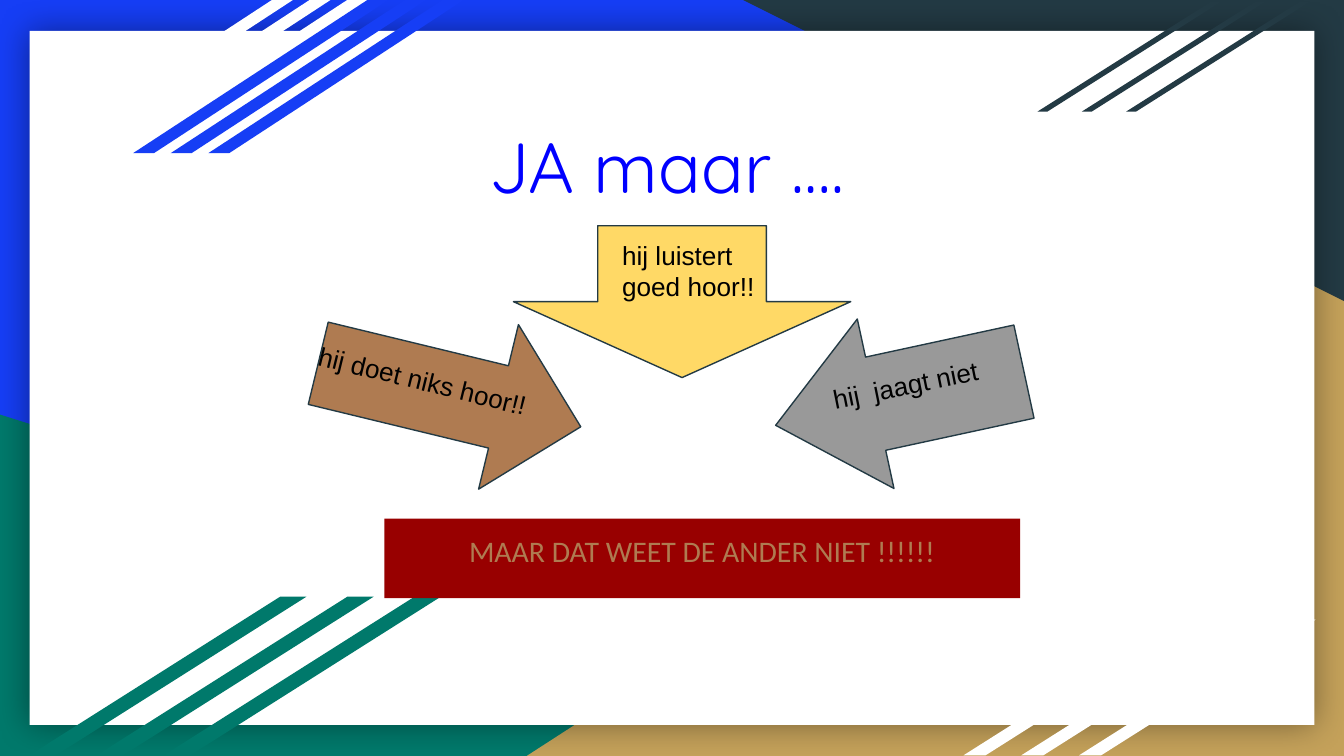
from lxml.etree import SubElement
from pptx import Presentation
from pptx.dml.color import RGBColor
from pptx.enum.shapes import MSO_SHAPE
from pptx.enum.text import MSO_ANCHOR, MSO_AUTO_SIZE, PP_ALIGN
from pptx.oxml.ns import qn
from pptx.util import Inches, Pt

BLUE = RGBColor(0x16, 0x3E, 0xF5)
GREEN = RGBColor(0x00, 0x79, 0x6B)
SAND = RGBColor(0xC4, 0xA1, 0x5A)
SLATE = RGBColor(0x23, 0x3A, 0x44)
WHITE = RGBColor(0xFF, 0xFF, 0xFF)
BLACK = RGBColor(0x00, 0x00, 0x00)
TITLE_BLUE = RGBColor(0x00, 0x00, 0xFF)
RED = RGBColor(0x98, 0x00, 0x00)
BROWN = RGBColor(0xAF, 0x7B, 0x51)
YELLOW = RGBColor(0xFF, 0xD9, 0x66)
GREY = RGBColor(0x99, 0x99, 0x99)

WIDTH = 10
HEIGHT = WIDTH * 9 / 16
SIDE_MARGIN, TOP_MARGIN = 0.22, 0.23
STRIPES_PER_GROUP = 3

TITLE = ("JA maar ….", (2.03, 0.67, 5.86, 1.12), "Quicksand", 38, TITLE_BLUE, MSO_ANCHOR.MIDDLE)
SUBTITLE = ("MAAR DAT WEET DE ANDER NIET !!!!!!", (2.86, 3.86, 4.73, 0.59),
            "Calibri", 16, BROWN, MSO_ANCHOR.TOP)

CORNERS = [
    ((8.06, 2.54), "bottom left", GREEN),
    ((6.08, 3.93), "bottom right", SAND),
    ((4.47, 2.24), "top right", SLATE),
]
STRIPE_GROUPS = [
    ((0.28, 0, 1.9, 1.14), 0.28, 1.53, WHITE),
    ((0.99, 0, 1.9, 1.14), 0.28, 1.53, BLUE),
    ((7.72, 0.01, 1.37, 0.82), 0.33, 1.58, SLATE),
    ((7.17, 4.61, 1.76, 1.01), 0.43, 1.58, WHITE),
    ((0.22, 4.44, 2.06, 1.18), 0.5, 1.58, GREEN),
]
ARROWS = [
    (MSO_SHAPE.DOWN_ARROW, (3.82, 1.68, 2.51, 1.13), 0, (0.5, 0.5), YELLOW,
     ["hij luistert", "goed hoor!!"], (4.53, 1.68, 1.21, 0.86), 0),
    (MSO_SHAPE.RIGHT_ARROW, (2.34, 2.31, 2.01, 1.26), 13.6, (0.5, 0.5), BROWN,
     ["hij doet niks hoor!!"], (2.25, 2.63, 1.93, 0.46), 13.7),
    (MSO_SHAPE.LEFT_ARROW, (5.75, 2.32, 1.89, 1.29), 347.8, (0.55, 0.59), GREY,
     ["hij  jaagt niet"], (6.11, 2.63, 1.43, 0.63), 348.6),
]


def add_filled(slide, kind, box, color, adjustments=()):
    shape = slide.shapes.add_shape(kind, *map(Inches, box))
    shape.shadow.inherit = False
    shape.fill.solid()
    shape.fill.fore_color.rgb = color
    shape.line.fill.background()
    for index, value in enumerate(adjustments):
        shape.adjustments[index] = value
    return shape


def add_soft_shadow(shape):
    effects = shape._element.spPr.find(qn("a:effectLst"))
    shadow = SubElement(effects, qn("a:outerShdw"), blurRad=str(Pt(18)), dist="0",
                        dir="0", algn="ctr", rotWithShape="0")
    color = SubElement(shadow, qn("a:srgbClr"), val=str(BLACK))
    SubElement(color, qn("a:alpha"), val="40000")


def write_text(shape, lines, font, size, color, align, anchor):
    frame = shape.text_frame
    frame.word_wrap = True
    frame.auto_size = MSO_AUTO_SIZE.NONE
    frame.vertical_anchor = anchor
    frame.margin_left = frame.margin_right = Inches(0.1)
    frame.margin_top = frame.margin_bottom = Inches(0.1)
    frame.text = "\n".join(lines)
    for paragraph in frame.paragraphs:
        paragraph.alignment = align
        paragraph.space_before = Pt(0)
        paragraph.font.name = font
        paragraph.font.size = Pt(size)
        paragraph.font.color.rgb = color


def draw_backdrop(slide):
    slide.background.fill.solid()
    slide.background.fill.fore_color.rgb = BLUE
    for (width, height), corner, color in CORNERS:
        left = WIDTH - width if "right" in corner else 0
        top = HEIGHT - height if "bottom" in corner else 0
        triangle = add_filled(slide, MSO_SHAPE.RIGHT_TRIANGLE, (left, top, width, height), color)
        if corner == "bottom right":
            triangle._element.spPr.xfrm.set("flipH", "1")
        elif corner == "top right":
            triangle.rotation = 180
    card = add_filled(slide, MSO_SHAPE.RECTANGLE,
                      (SIDE_MARGIN, TOP_MARGIN,
                       WIDTH - 2 * SIDE_MARGIN, HEIGHT - 2 * TOP_MARGIN), WHITE)
    add_soft_shadow(card)
    for (left, top, width, height), step, slant, color in STRIPE_GROUPS:
        for index in reversed(range(STRIPES_PER_GROUP)):
            add_filled(slide, MSO_SHAPE.PARALLELOGRAM,
                       (left + index * step, top, width, height), color, (slant,))


def fill_placeholder(slide, placeholder, content):
    text, box, font, size, color, anchor = content
    placeholder.left, placeholder.top, placeholder.width, placeholder.height = map(Inches, box)
    write_text(placeholder, [text], font, size, color, PP_ALIGN.CENTER, anchor)
    slide.shapes._spTree.append(placeholder._element)


def draw_arrow(slide, kind, box, rotation, adjustments, color, lines, text_box, text_rotation):
    arrow = add_filled(slide, kind, box, color, adjustments)
    arrow.rotation = rotation
    arrow.line.color.rgb = SLATE
    arrow.line.width = Pt(0.75)
    label = slide.shapes.add_textbox(*map(Inches, text_box))
    label.rotation = text_rotation
    write_text(label, lines, "Arial", 14, BLACK, PP_ALIGN.LEFT, MSO_ANCHOR.TOP)


def main():
    presentation = Presentation()
    presentation.slide_width = Inches(WIDTH)
    presentation.slide_height = Inches(HEIGHT)
    slide = presentation.slides.add_slide(presentation.slide_layouts[0])
    draw_backdrop(slide)
    subtitle = slide.placeholders[1]
    fill_placeholder(slide, slide.shapes.title, TITLE)
    fill_placeholder(slide, subtitle, SUBTITLE)
    subtitle.fill.solid()
    subtitle.fill.fore_color.rgb = RED
    for arrow in ARROWS:
        draw_arrow(slide, *arrow)
    presentation.save("out.pptx")


if __name__ == "__main__":
    main()
